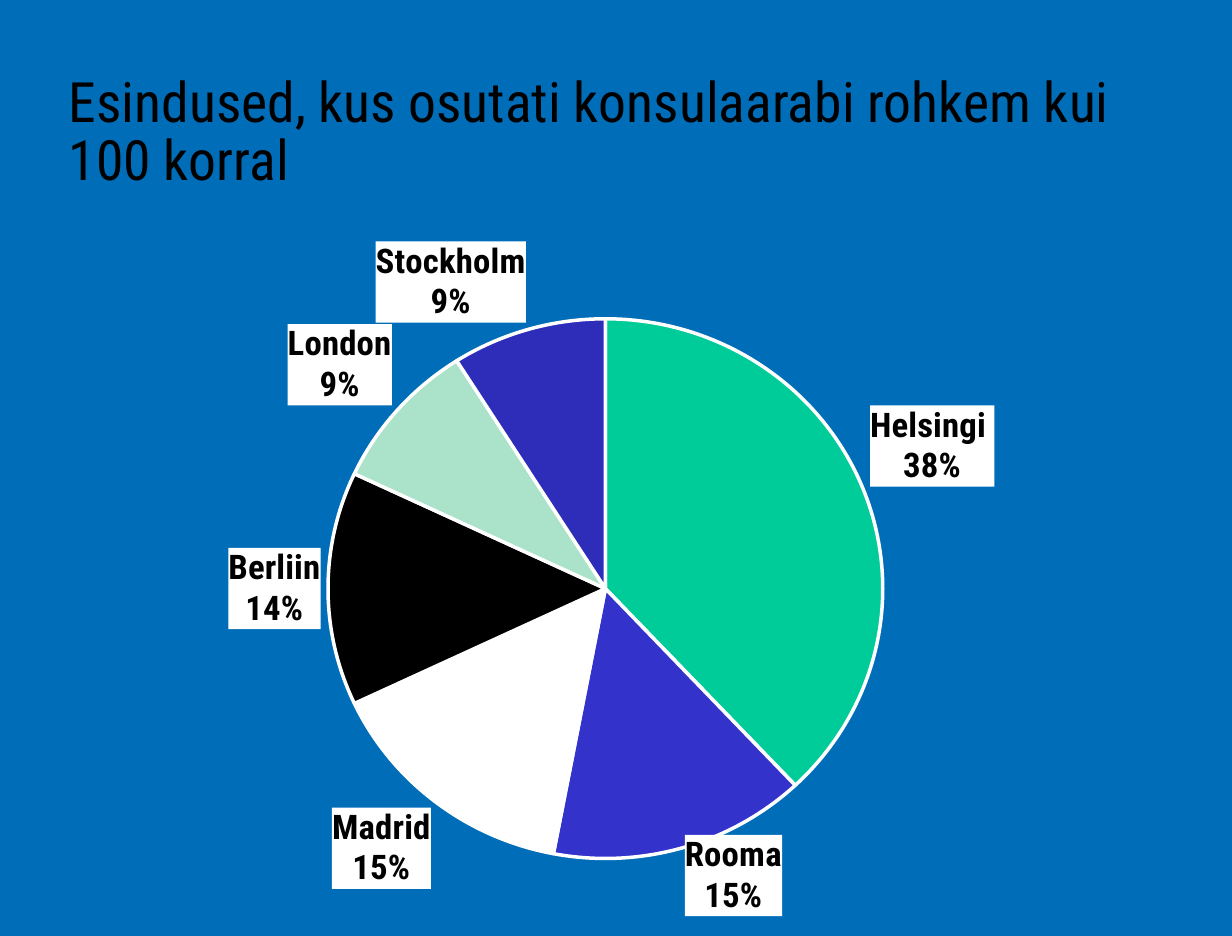
from lxml import etree
from pptx import Presentation
from pptx.chart.data import CategoryChartData as Data
from pptx.dml.color import RGBColor
from pptx.enum.chart import XL_CHART_TYPE as Kind, XL_LABEL_POSITION as Pos
from pptx.enum.text import MSO_ANCHOR as Anchor
from pptx.oxml import parse_xml
from pptx.oxml.ns import nsdecls, qn
from pptx.util import Inches, Pt

BLUE = RGBColor(0x00, 0x6D, 0xB9)
BLACK = RGBColor(0x00, 0x00, 0x00)
WHITE = RGBColor(0xFF, 0xFF, 0xFF)
GREEN = RGBColor(0x00, 0xCC, 0x99)
INDIGO = RGBColor(0x33, 0x33, 0xCC)
MINT = RGBColor(0xAA, 0xE2, 0xCA)
NAVY = RGBColor(0x2D, 0x2D, 0xB9)
FACE = "Roboto Condensed"


def style(font, size, color=BLACK, bold=False):
    font.name = FACE
    font.size = Pt(size)
    font.color.rgb = color
    font.bold = bold


def add_text(slide, text, left, top, width, height, size, spacing=1.0):
    box = slide.shapes.add_textbox(Inches(left), Inches(top),
                                   Inches(width), Inches(height))
    frame = box.text_frame
    frame.word_wrap = True
    frame.vertical_anchor = Anchor.MIDDLE
    frame.margin_left = frame.margin_right = 0
    frame.margin_top = frame.margin_bottom = 0
    para = frame.paragraphs[0]
    para.line_spacing = spacing
    run = para.add_run()
    run.text = text
    style(run.font, size)


# Slide of 25 by 19 cm, and its background
deck = Presentation()
deck.slide_width, deck.slide_height = Inches(25 / 2.54), Inches(19 / 2.54)
slide = deck.slides.add_slide(deck.slide_layouts[6])
slide.background.fill.solid()
slide.background.fill.fore_color.rgb = BLUE

# Title
add_text(slide, "Esindused, kus osutati konsulaarabi rohkem kui 100 korral",
         0.55, 0.43, 8.66, 1.28, size=32, spacing=0.88)

# Pie chart: city, share, slice colour
cities = [
    ("Helsingi ", 38, GREEN),
    ("Rooma", 15, INDIGO),
    ("Madrid", 15, WHITE),
    ("Berliin", 14, BLACK),
    ("London", 9, MINT),
    ("Stockholm", 9, NAVY),
]
data = Data()
data.categories = [name for name, share, color in cities]
data.add_series("Series 1", [share for name, share, color in cities])
chart = slide.shapes.add_chart(Kind.PIE, Inches(0.55), Inches(1.57),
                               Inches(8.66), Inches(5.91), data).chart
chart.has_title = False
chart.has_legend = False
style(chart.font, 10)

# Slices
plot = chart.plots[0]
plot.vary_by_categories = True
series = plot.series[0]
for i, (name, share, color) in enumerate(cities):
    form = series.points[i].format
    form.fill.solid()
    form.fill.fore_color.rgb = color
    form.line.color.rgb = WHITE
    form.line.width = Pt(2)

# Labels on white, name above percentage
labels = series.data_labels
style(labels.font, 20, bold=True)
labels.number_format = "0%"
labels.number_format_is_linked = False
labels.position = Pos.OUTSIDE_END
labels.show_category_name = True
labels.show_percentage = True
labels.show_value = False
node = series._element.find(qn("c:dLbls"))
node.find(qn("c:txPr")).addprevious(parse_xml(
    f'<c:spPr {nsdecls("c", "a")}><a:solidFill><a:srgbClr val="{WHITE}"/>'
    '</a:solidFill><a:ln><a:noFill/></a:ln></c:spPr>'))
gap = etree.Element(qn("c:separator"))
gap.text = "\n"
node.find(qn("c:showBubbleSize")).addnext(gap)

# Plot area placement
area = chart._chartSpace.chart.plotArea
for old in area.findall(qn("c:layout")):
    area.remove(old)
area.insert(0, parse_xml(
    f'<c:layout {nsdecls("c")}><c:manualLayout>'
    '<c:layoutTarget val="inner"/><c:xMode val="edge"/><c:yMode val="edge"/>'
    '<c:x val="0.08"/><c:y val="0.17"/><c:w val="0.83"/><c:h val="0.75"/>'
    '</c:manualLayout></c:layout>'))

deck.save("out.pptx")
